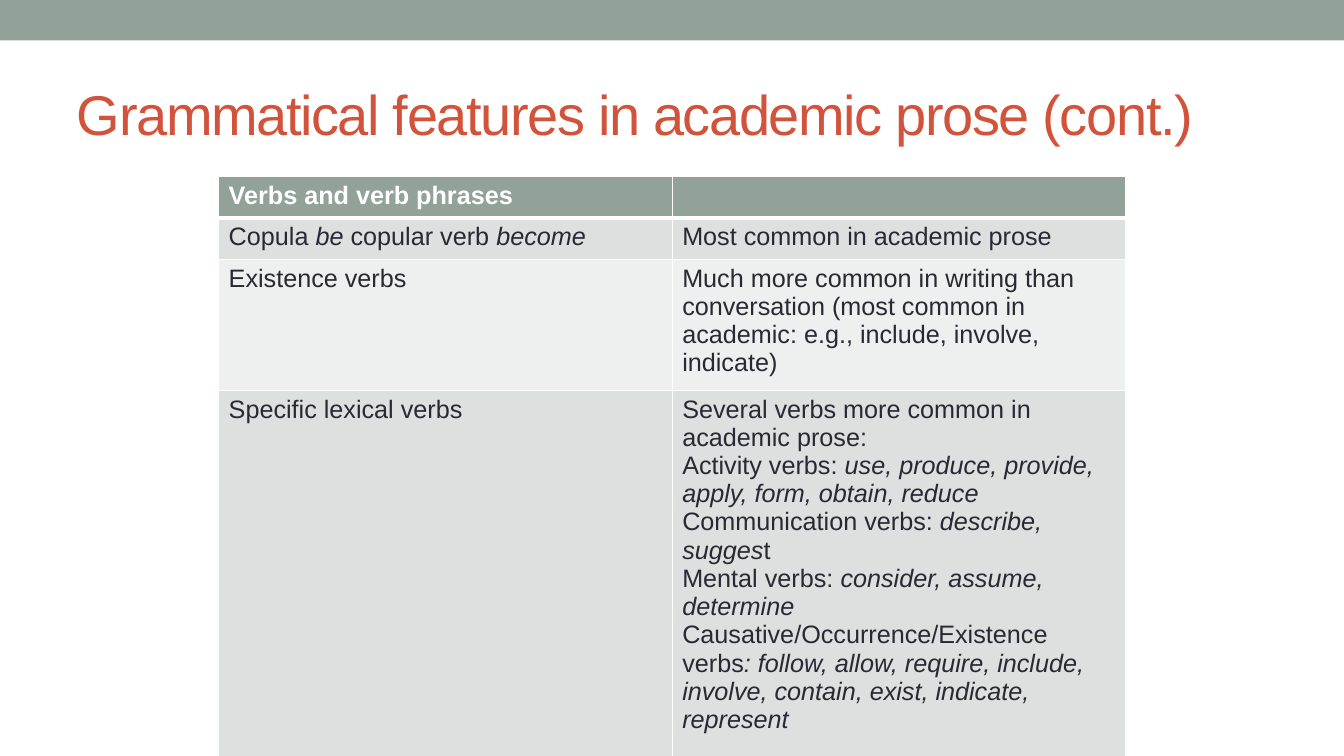
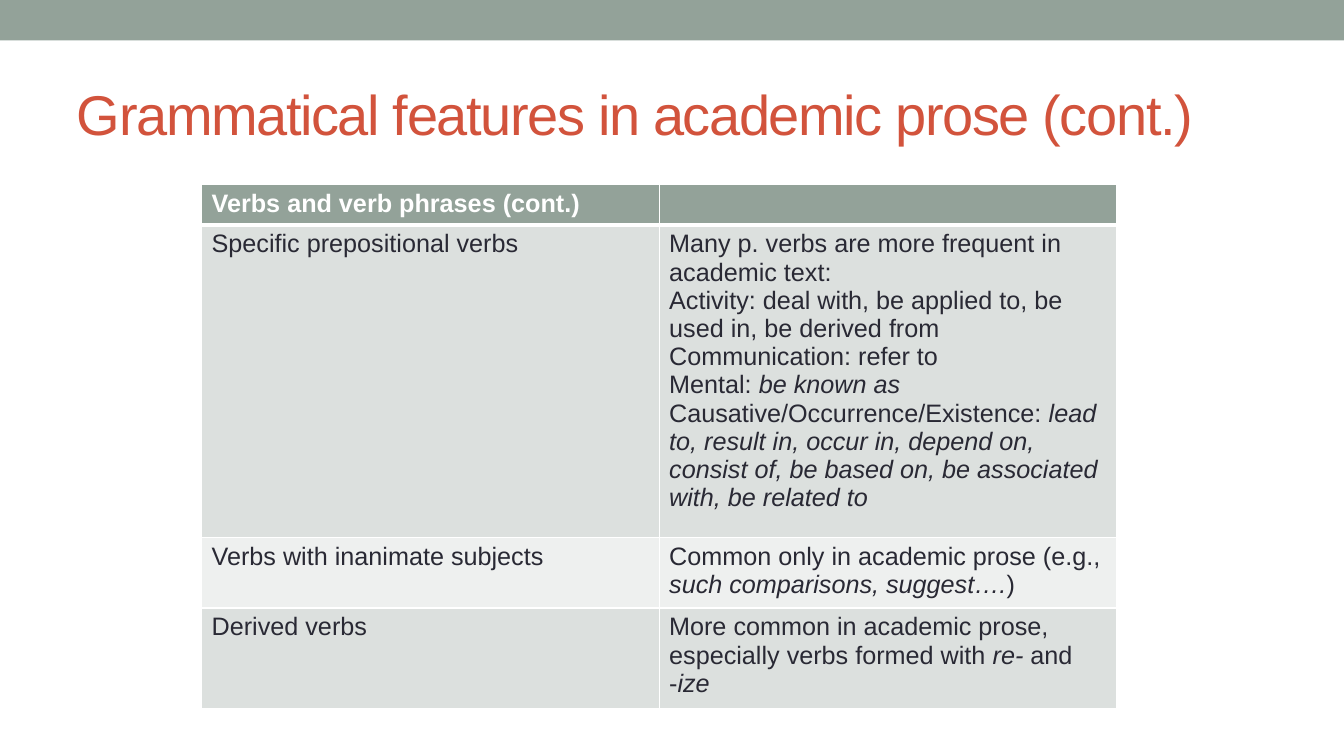
from dataclasses import dataclass

from lxml import etree
from pptx import Presentation
from pptx import util as u
from pptx.dml.color import RGBColor
from pptx.enum import shapes, text
from pptx.oxml import ns

SAGE = RGBColor(0x93, 0xA2, 0x99)
RUST = RGBColor(0xD2, 0x53, 0x3C)
INK = RGBColor(0x29, 0x29, 0x34)
WHITE = RGBColor(0xFF, 0xFF, 0xFF)
BANDS = (RGBColor(0xDC, 0xE0, 0xDE), RGBColor(0xEE, 0xF0, 0xEF))
FONT = "Arial"
WIDE, HIGH = u.Cm(33.87), u.Cm(19.05)
TITLE = "Grammatical features in academic prose (cont.)"


@dataclass
class Row:
    high: float
    name: str
    notes: tuple[str, ...]


@dataclass
class Grid:
    left: float
    top: float
    col: float
    rows: list[Row]


GRIDS = [
    Grid(5.51, 4.45, 11.43, [
        Row(1.04, "Verbs and verb phrases", ("",)),
        Row(1.04, "Copula *be* copular verb *become*", ("Most common in academic prose",)),
        Row(3.1, "Existence verbs", (
            "Much more common in writing than conversation "
            "(most common in academic: e.g., include, involve, indicate)",
        )),
        Row(8.8, "Specific lexical verbs", (
            "Several verbs more common in academic prose:",
            "Activity verbs: *use, produce, provide, apply, form, obtain, reduce*",
            "Communication verbs: *describe, sugges*t",
            "Mental verbs: *consider, assume, determine*",
            "Causative/Occurrence/Existence verbs*: follow, allow, require, include, "
            "involve, contain, exist, indicate, represent*",
        )),
    ]),
    Grid(5.08, 4.65, 11.53, [
        Row(0.96, "Verbs and verb phrases (cont.)", ("",)),
        Row(7.38, "Specific prepositional verbs", (
            "Many p. verbs are more frequent in academic text:",
            "Activity: deal with, be applied to, be used in, be derived from",
            "Communication: refer to",
            "Mental: *be known as*",
            "Causative/Occurrence/Existence: *lead to, result in, occur in, depend on, "
            "consist of, be based on, be associated with, be related to*",
        )),
        Row(1.68, "Verbs with inanimate subjects", (
            "Common only in academic prose (e.g., *such comparisons, suggest….*)",
        )),
        Row(2.36, "Derived verbs", (
            "More common in academic prose, especially verbs formed with *re- *and -*ize*",
        )),
    ]),
]


def style(para, size: float, color: RGBColor, bold: bool = False) -> None:
    font = para.font
    font.name, font.size, font.bold = FONT, u.Pt(size), bold
    font.color.rgb = color


def write(frame, lines: tuple[str, ...], color: RGBColor, bold: bool) -> None:
    for i, line in enumerate(lines):
        para = frame.add_paragraph() if i else frame.paragraphs[0]
        style(para, 18, color, bold)
        for j, part in enumerate(line.split("*")):
            if part:
                run = para.add_run()
                run.text = part
                if j % 2:
                    run.font.italic = True


def edge(cell, base: float) -> None:
    props = cell._tc.get_or_add_tcPr()
    for i, side in enumerate("LRTB"):
        wide = base if side == "B" else 1
        line = etree.Element(ns.qn(f"a:ln{side}"), w=str(u.Pt(wide)))
        fill = etree.SubElement(line, ns.qn("a:solidFill"))
        etree.SubElement(fill, ns.qn("a:srgbClr"), val=str(WHITE))
        props.insert(i, line)


def frame(slide) -> None:
    band = slide.shapes.add_shape(shapes.MSO_SHAPE.RECTANGLE, 0, 0, WIDE, u.Cm(1.02))
    band.shadow.inherit = False
    band.fill.solid()
    band.fill.fore_color.rgb = SAGE
    band.line.fill.background()

    box = slide.shapes.add_textbox(u.Cm(1.69), u.Cm(1.48), u.Cm(30.48), u.Cm(2.74))
    body = box.text_frame
    body.word_wrap = True
    body.vertical_anchor = text.MSO_ANCHOR.MIDDLE
    para = body.paragraphs[0]
    style(para, 40, RUST)
    run = para.add_run()
    run.text = TITLE
    run.font._element.set("spc", "-100")


def draw(slide, grid: Grid) -> None:
    high = sum(row.high for row in grid.rows)
    table = slide.shapes.add_table(
        len(grid.rows), 2, u.Cm(grid.left), u.Cm(grid.top), u.Cm(2 * grid.col), u.Cm(high)
    ).table
    table.horz_banding = False
    for i, row in enumerate(grid.rows):
        table.rows[i].height = u.Cm(row.high)
        head = i == 0
        for cell, lines in zip(table.rows[i].cells, ((row.name,), row.notes)):
            cell.fill.solid()
            cell.fill.fore_color.rgb = SAGE if head else BANDS[(i - 1) % 2]
            edge(cell, 3 if head else 1)
            write(cell.text_frame, lines, WHITE if head else INK, head)


def main() -> None:
    deck = Presentation()
    deck.slide_width, deck.slide_height = WIDE, HIGH
    for grid in GRIDS:
        slide = deck.slides.add_slide(deck.slide_layouts[6])
        frame(slide)
        draw(slide, grid)
    deck.save("out.pptx")


if __name__ == "__main__":
    main()
